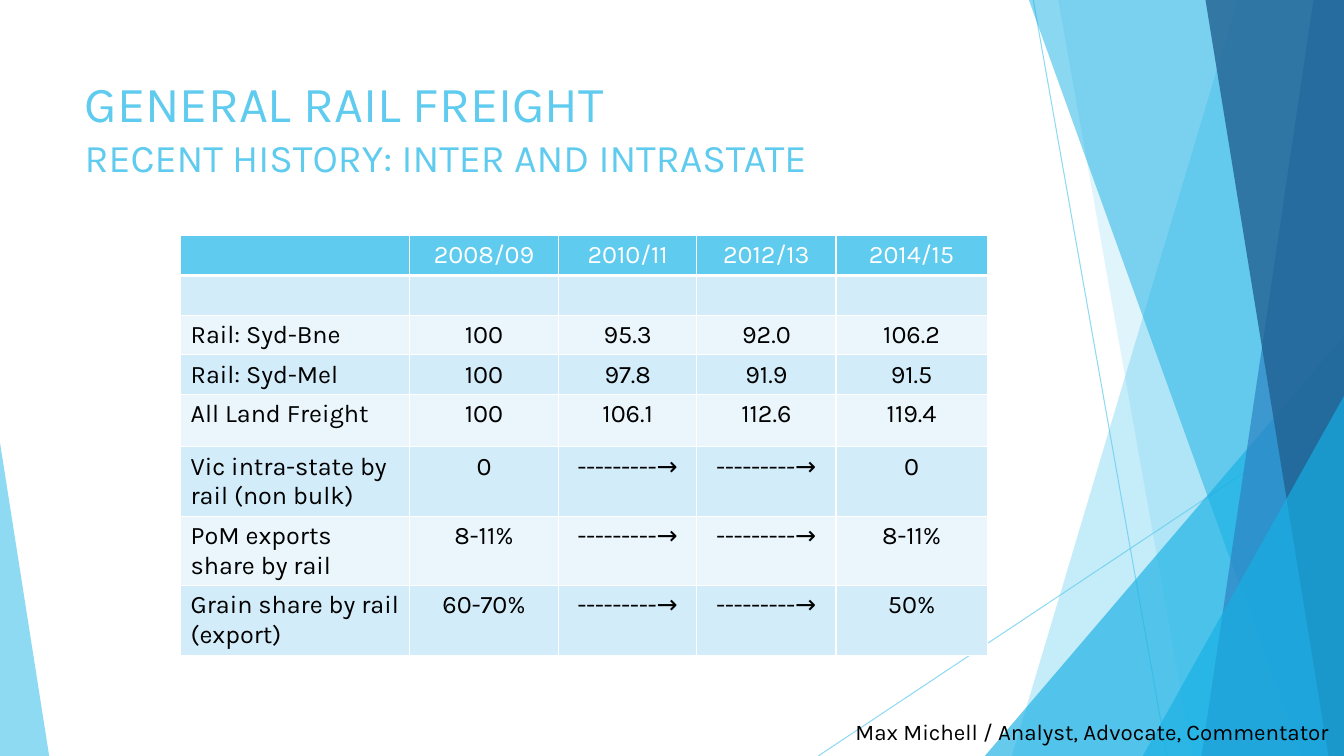
import pptx
import pptx.dml.color
import pptx.enum.shapes
import pptx.enum.text
import pptx.oxml
import pptx.oxml.ns
import pptx.util
from pptx.util import Cm

COLORS = {"sky": "5FCBEF", "cyan": "17B0E4", "blue": "2E83C3", "navy": "226292",
          "band": "D2ECF9", "pale": "EAF6FC", "white": "FFFFFF", "black": "000000"}
FONT = "Karla"
WIDTH, HEIGHT = 33.87, 19.05
ARROW = "---------→"
COLUMNS = [5.77, 3.76, 3.48, 3.51, 3.81]
HEIGHTS = [0.99] * 4 + [1.32] + [1.75] * 3
ROWS = [
    ["", "2008/09", "2010/11", "2012/13", "2014/15"],
    [""] * 5,
    ["Rail: Syd-Bne", "100", "95.3", "92.0", "106.2"],
    ["Rail: Syd-Mel", "100", "97.8", "91.9", "91.5"],
    ["All Land Freight", "100", "106.1", "112.6", "119.4"],
    ["Vic intra-state by rail (non bulk)", "0", ARROW, ARROW, "0"],
    ["PoM exports share by rail", "8-11%", ARROW, ARROW, "8-11%"],
    ["Grain share by rail (export)", "60-70%", ARROW, ARROW, "50%"],
]


def rgb(name):
    """Return the named colour."""
    return pptx.dml.color.RGBColor.from_string(COLORS[name])


def set_alpha(fill, percent):
    """Make a solid fill translucent."""
    node = fill.fore_color._xFill[0]
    pptx.oxml.ns.qn("a:alpha")
    node.append(pptx.oxml.parse_xml(
        f'<a:alpha {pptx.oxml.ns.nsdecls("a")} val="{percent * 1000}"/>'))


def paint(sp, color, percent):
    """Give a shape a translucent fill with no outline or shadow."""
    sp.shadow.inherit = False
    sp.fill.solid()
    sp.fill.fore_color.rgb = rgb(color)
    set_alpha(sp.fill, percent)
    sp.line.fill.background()


def set_font(p, size, color):
    """Set the font of a paragraph."""
    p.font.name = FONT
    p.font.size = pptx.util.Pt(size)
    p.font.bold = False
    p.font.color.rgb = rgb(color)


def add_ray(s, x1, y1, x2, y2):
    """Draw a thin translucent line."""
    line = s.shapes.add_connector(pptx.enum.shapes.MSO_CONNECTOR.STRAIGHT,
                                  Cm(x1), Cm(y1), Cm(x2), Cm(y2))
    line.line.width = pptx.util.Pt(0.75)
    line.line.fill.solid()
    line.line.fill.fore_color.rgb = rgb("sky")
    set_alpha(line.line.fill, 70)
    line._element.spPr.append(pptx.oxml.parse_xml(
        f'<a:effectLst {pptx.oxml.ns.nsdecls("a")}/>'))


def add_band(s, top, bottom, color, percent):
    """Fill from a slanted left edge to the right side of the slide."""
    outline = s.shapes.build_freeform(Cm(top), 0)
    outline.add_line_segments([(Cm(WIDTH), 0), (Cm(WIDTH), Cm(HEIGHT)),
                               (Cm(bottom), Cm(HEIGHT))])
    paint(outline.convert_to_shape(), color, percent)


def add_corner(s, left, top, width, apex, color, percent):
    """Draw a triangle that stands on the bottom of the slide."""
    sp = s.shapes.add_shape(pptx.enum.shapes.MSO_SHAPE.ISOSCELES_TRIANGLE,
                            Cm(left), Cm(top), Cm(width), Cm(HEIGHT - top))
    sp.adjustments[0] = apex
    paint(sp, color, percent)


def add_facets(s):
    """Draw the faceted decoration at both sides of the slide."""
    add_ray(s, 26.04, 0, 29.41, HEIGHT)
    add_ray(s, WIDTH, 10.24, 20.62, HEIGHT)
    add_band(s, 31.19, 25.5, "sky", 36)
    add_band(s, 26.67, 30.05, "sky", 20)
    add_corner(s, 24.82, 8.46, 9.05, 1, "cyan", 66)
    add_band(s, 25.93, 32.79, "cyan", 50)
    add_band(s, 33.1, 30.28, "blue", 70)
    add_band(s, 30.38, 33.48, "navy", 80)
    add_corner(s, 28.8, 9.98, 5.07, 1, "cyan", 66)
    add_corner(s, 0, 11.15, 1.24, 0, "sky", 70)


def add_title(s, left, top, width, height):
    """Fill the title placeholder with a heading and a smaller second line."""
    sp = s.shapes.title
    sp.left, sp.top, sp.width, sp.height = Cm(left), Cm(top), Cm(width), Cm(height)
    tf = sp.text_frame
    tf.vertical_anchor = pptx.enum.text.MSO_ANCHOR.TOP
    p = tf.paragraphs[0]
    p.alignment = pptx.enum.text.PP_ALIGN.LEFT
    set_font(p, 36, "sky")
    p.add_run().text = "GENERAL RAIL FREIGHT"
    p.add_line_break()
    r = p.add_run()
    r.text = "RECENT HISTORY: INTER AND INTRASTATE"
    r.font.size = pptx.util.Pt(28)


def add_borders(cell, bottom):
    """Draw white borders round a cell."""
    for side, points in zip("LRTB", (1, 1, 1, bottom)):
        cell._tc.get_or_add_tcPr().append(pptx.oxml.parse_xml(
            f'<a:ln{side} {pptx.oxml.ns.nsdecls("a")} w="{points * 12700}"><a:solidFill>'
            f'<a:srgbClr val="{COLORS["white"]}"/></a:solidFill></a:ln{side}>'))


def add_freight_table(s, left, top):
    """Add the table of freight indices and rail shares."""
    table = s.shapes.add_table(len(ROWS), len(COLUMNS), Cm(left), Cm(top),
                               Cm(sum(COLUMNS)), Cm(sum(HEIGHTS))).table
    for column, width in zip(table.columns, COLUMNS):
        column.width = Cm(width)
    for i, (row, height) in enumerate(zip(ROWS, HEIGHTS)):
        table.rows[i].height = Cm(height)
        fill = "sky" if i == 0 else ("pale", "band")[i % 2]
        for j, text in enumerate(row):
            cell = table.cell(i, j)
            add_borders(cell, 3 if i == 0 else 1)
            cell.fill.solid()
            cell.fill.fore_color.rgb = rgb(fill)
            p = cell.text_frame.paragraphs[0]
            if text:
                p.text = text
            if j:
                p.alignment = pptx.enum.text.PP_ALIGN.CENTER
            set_font(p, 18, "black" if i else "white")


def add_credit(s, left, top, width, height):
    """Add the speaker line at the foot of the slide."""
    tf = s.shapes.add_textbox(Cm(left), Cm(top), Cm(width), Cm(height)).text_frame
    tf.word_wrap = False
    p = tf.paragraphs[0]
    p.text = "Max Michell / Analyst, Advocate, Commentator"
    set_font(p, 16, "black")


def main():
    """Build and save the slide."""
    prs = pptx.Presentation()
    prs.slide_width, prs.slide_height = Cm(WIDTH), Cm(HEIGHT)
    s = prs.slides.add_slide(prs.slide_layouts[5])
    add_facets(s)
    add_title(s, 1.88, 1.7, 23.88, 3.66)
    add_freight_table(s, 4.55, 5.94)
    add_credit(s, 21.31, 17.96, 12.55, 0.94)
    prs.save("out.pptx")


if __name__ == "__main__":
    main()
